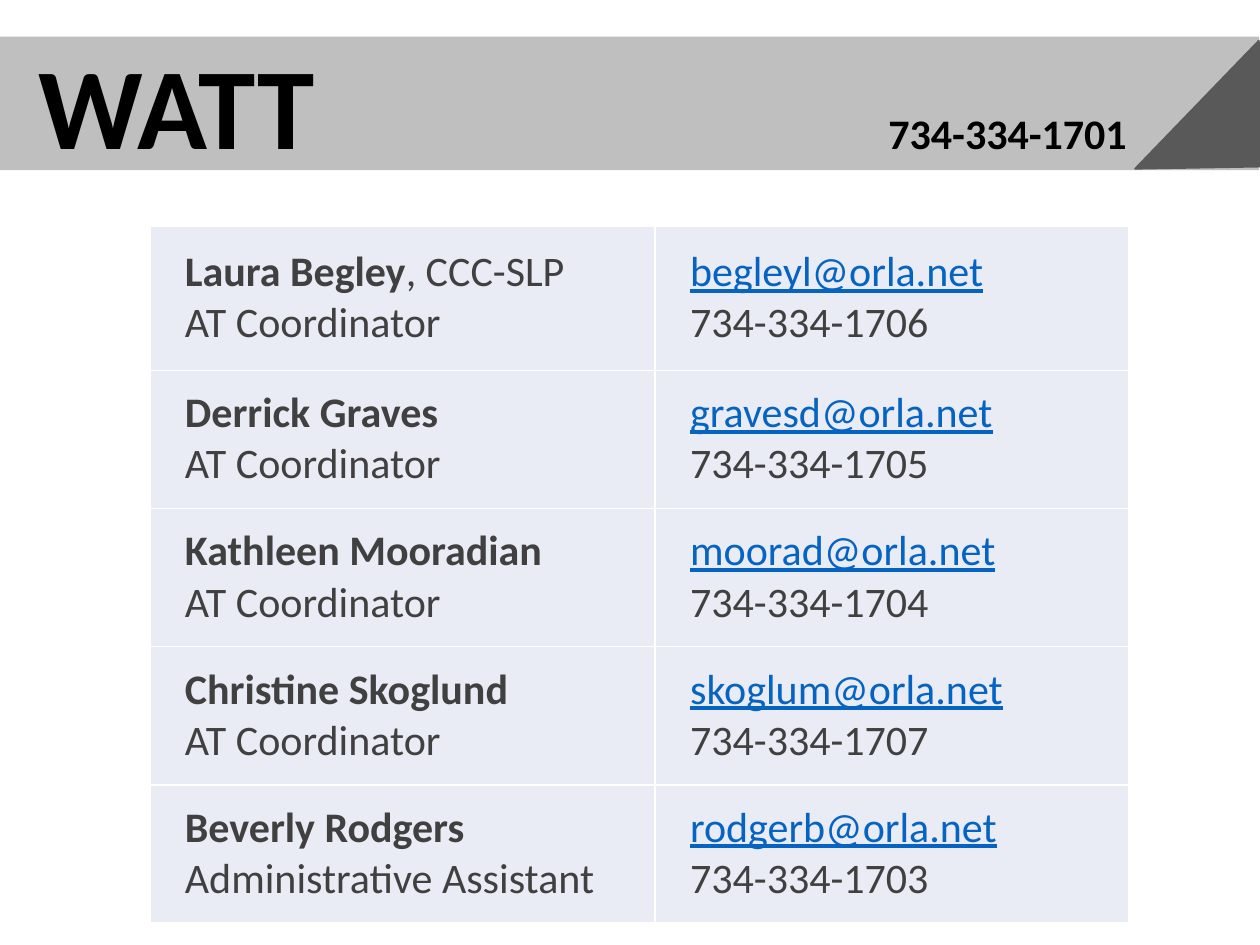
"""Build the WATT contact slide with a title band and a staff table."""
from pptx import Presentation
from pptx.dml.color import RGBColor
from pptx.enum.shapes import MSO_SHAPE
from pptx.enum.text import MSO_ANCHOR, MSO_AUTO_SIZE, PP_ALIGN
from pptx.oxml import parse_xml
from pptx.oxml.ns import nsdecls
from pptx.util import Pt


def paint(fill, tone):
    fill.solid()
    fill.fore_color.rgb = RGBColor.from_string(tone)


def write(para, text, size=24, tone="404040", bold=False, line=False):
    run = para.add_run()
    run.text = text
    font = run.font
    font.name = "Calibri"
    font.size = Pt(size)
    font.bold = bold
    font.underline = line
    font.color.rgb = RGBColor.from_string(tone)


deck = Presentation()
deck.slide_width, deck.slide_height = Pt(720), Pt(540)
slide = deck.slides.add_slide(deck.slide_layouts[5])

staff = [
    ("Laura Begley", ", CCC-SLP", "AT Coordinator", "begleyl", "1706"),
    ("Derrick Graves", "", "AT Coordinator", "gravesd", "1705"),
    ("Kathleen Mooradian", "", "AT Coordinator", "moorad", "1704"),
    ("Christine Skoglund", "", "AT Coordinator", "skoglum", "1707"),
    ("Beverly Rodgers", "", "Administrative Assistant", "rodgerb", "1703"),
]

band = slide.shapes.title
band.left, band.top, band.width, band.height = Pt(0), Pt(20.9), Pt(719.5), Pt(76.3)
paint(band.fill, "BFBFBF")
frame = band.text_frame
frame.auto_size = MSO_AUTO_SIZE.NONE
frame.vertical_anchor = MSO_ANCHOR.MIDDLE
frame.margin_left = Pt(22)
frame.margin_top = frame.margin_bottom = Pt(0)
head = frame.paragraphs[0]
head.alignment = PP_ALIGN.LEFT
write(head, "WATT", size=66, tone="000000", bold=True)
write(head, "\t734-334-1701", tone="000000", bold=True)
tabs = f'<a:tabLst {nsdecls("a")}><a:tab pos="{Pt(622)}" algn="r"/></a:tabLst>'
head._p.get_or_add_pPr().append(parse_xml(tabs))

fold = slide.shapes.add_shape(MSO_SHAPE.RIGHT_TRIANGLE, Pt(648), Pt(23.8), Pt(72), Pt(72))
fold.rotation = 269
fold.shadow.inherit = False
paint(fold.fill, "595959")
paint(fold.line.fill, "595959")
fold.line.width = Pt(1)

table = slide.shapes.add_table(len(staff), 2, Pt(85.7), Pt(129), Pt(559), Pt(398)).table
table.first_row = False
table.horz_banding = False
table.columns[0].width, table.columns[1].width = Pt(288.7), Pt(270.5)

for i, (name, note, role, user, ext) in enumerate(staff):
    row = table.rows[i]
    pad = Pt(10) if i else Pt(12)
    row.height = Pt(79) if i else Pt(82.5)
    for cell in row.cells:
        paint(cell.fill, "E9EBF5")
        cell.margin_left = Pt(20)
        cell.margin_top = cell.margin_right = cell.margin_bottom = pad
    left, right = (cell.text_frame for cell in row.cells)
    write(left.paragraphs[0], name, bold=True)
    if note:
        write(left.paragraphs[0], note)
    write(left.add_paragraph(), role)
    write(right.paragraphs[0], f"{user}@orla.net", tone="0563C1", line=True)
    write(right.add_paragraph(), f"734-334-{ext}")

deck.save("out.pptx")
